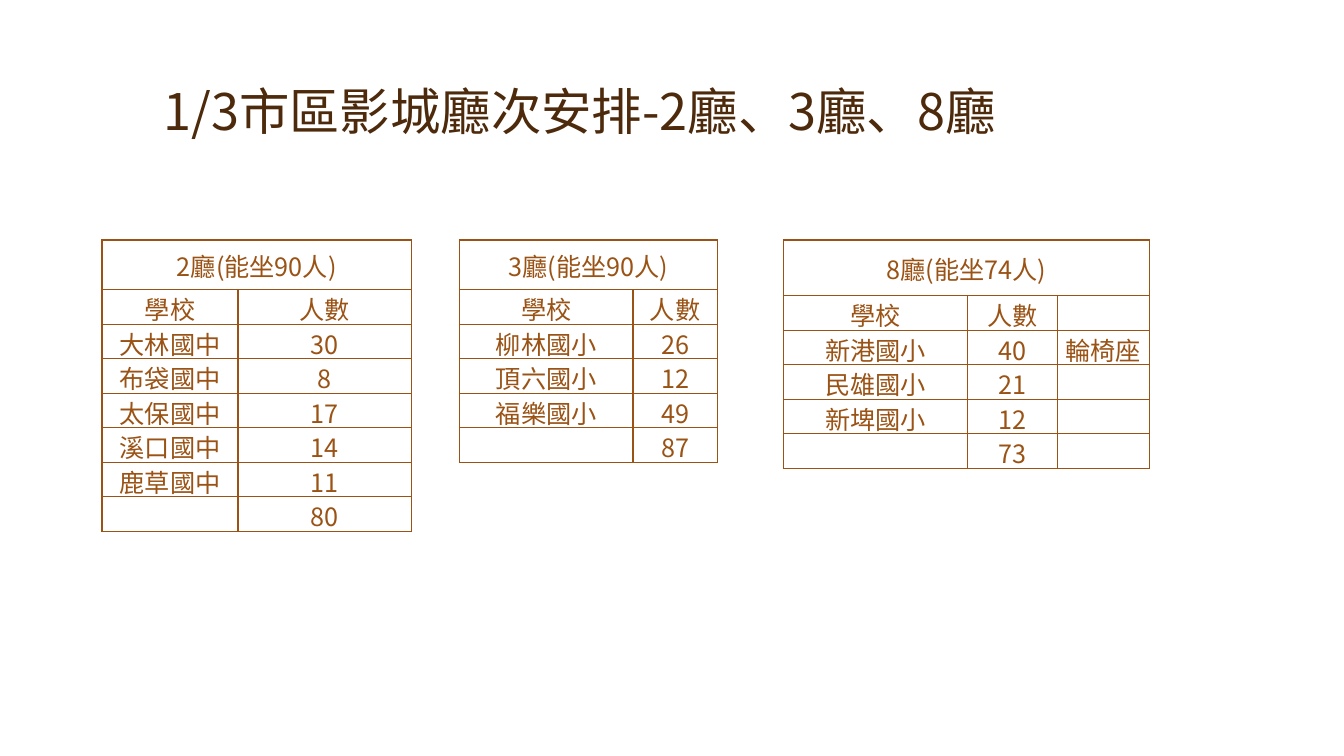
from lxml.etree import SubElement
from pptx import Presentation
from pptx.dml.color import RGBColor
from pptx.enum.text import MSO_ANCHOR as Anchor, PP_ALIGN as Align
from pptx.oxml.ns import qn
from pptx.util import Cm, Pt

FONT = "Noto Sans CJK SC"
COLORS = {"title": "4D2A0B", "table": "9A5315"}
TABLE_TOP = 6.05
ROW_HEIGHT = 0.87

# Each hall: left edge, column widths, heading height (cm), heading, rows
HALLS = [
    (2.57, [3.43, 4.37], 1.25, "2廳(能坐90人)", [
        ["學校", "人數"],
        ["大林國中", "30"],
        ["布袋國中", "8"],
        ["太保國中", "17"],
        ["溪口國中", "14"],
        ["鹿草國中", "11"],
        ["", "80"],
    ]),
    (11.58, [4.37, 2.13], 1.25, "3廳(能坐90人)", [
        ["學校", "人數"],
        ["柳林國小", "26"],
        ["頂六國小", "12"],
        ["福樂國小", "49"],
        ["", "87"],
    ]),
    (19.74, [4.65, 2.26, 2.31], 1.4, "8廳(能坐74人)", [
        ["學校", "人數", ""],
        ["新港國小", "40", "輪椅座"],
        ["民雄國小", "21", ""],
        ["新埤國小", "12", ""],
        ["", "73", ""],
    ]),
]


def write_text(text_frame, text, size, color):
    """Fill the first paragraph with centred text."""
    paragraph = text_frame.paragraphs[0]
    paragraph.text = text
    paragraph.alignment = Align.CENTER
    font = paragraph.font
    font.size = Pt(size)
    font.name = FONT
    font.color.rgb = RGBColor.from_string(COLORS[color])
    # East Asian characters take their own typeface element
    properties = paragraph._p.pPr.find(qn("a:defRPr"))
    SubElement(properties, qn("a:ea"), typeface=FONT)
    return paragraph


def add_title(slide, text):
    shape = slide.shapes.add_textbox(0, 0, Cm(29.21), Cm(3.68))
    text_frame = shape.text_frame
    text_frame.word_wrap = True
    text_frame.vertical_anchor = Anchor.BOTTOM
    write_text(text_frame, text, 36, "title").line_spacing = 0.9


def add_borders(cell):
    properties = cell._tc.get_or_add_tcPr()
    for side in ("lnL", "lnR", "lnT", "lnB"):
        line = SubElement(properties, qn(f"a:{side}"), w=str(Pt(1)))
        fill = SubElement(line, qn("a:solidFill"))
        SubElement(fill, qn("a:srgbClr"), val=COLORS["table"])


def format_cell(cell, text):
    add_borders(cell)
    cell.fill.background()
    cell.margin_left = cell.margin_right = cell.margin_top = Cm(0.02)
    cell.margin_bottom = 0
    cell.vertical_anchor = Anchor.MIDDLE
    write_text(cell.text_frame, text, 18, "table")


def add_hall_table(slide, left, widths, heading_height, heading, rows):
    heading_row = [heading] + [""] * (len(widths) - 1)
    grid = [heading_row] + rows
    heights = [heading_height] + [ROW_HEIGHT] * len(rows)
    table = slide.shapes.add_table(
        len(grid), len(widths), Cm(left), Cm(TABLE_TOP),
        Cm(sum(widths)), Cm(sum(heights))).table
    table.first_row = table.horz_banding = False

    for column, width in zip(table.columns, widths):
        column.width = Cm(width)
    for row, height, texts in zip(table.rows, heights, grid):
        row.height = Cm(height)
        for cell, text in zip(row.cells, texts):
            format_cell(cell, text)
    table.cell(0, 0).merge(table.cell(0, len(widths) - 1))


def main():
    presentation = Presentation()
    presentation.slide_width = Cm(33.87)
    presentation.slide_height = Cm(19.05)
    slide = presentation.slides.add_slide(presentation.slide_layouts[6])

    add_title(slide, "1/3市區影城廳次安排-2廳、3廳、8廳")
    for hall in HALLS:
        add_hall_table(slide, *hall)

    presentation.save("out.pptx")


if __name__ == "__main__":
    main()
